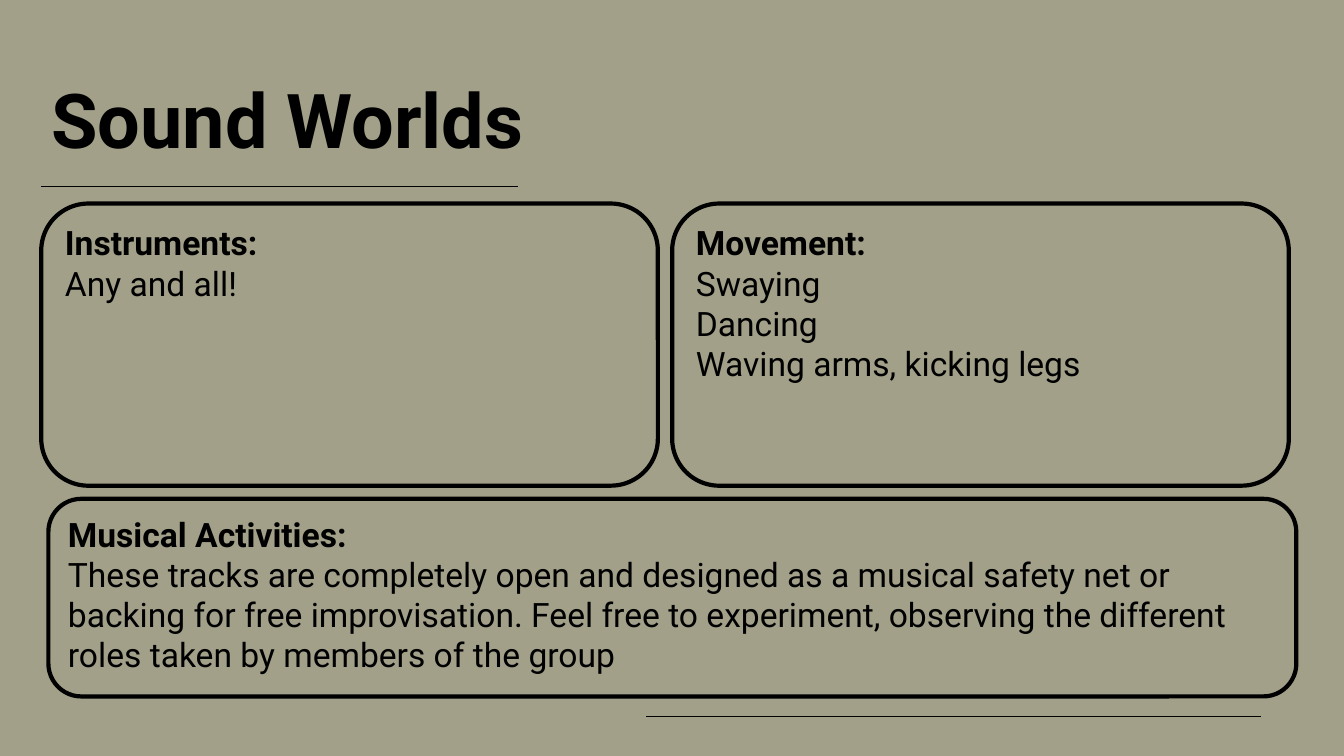
import pptx
import pptx.util
import pptx.dml.color
import pptx.enum.shapes
import pptx.enum.text
import pptx.oxml.ns
from dataclasses import dataclass
from lxml import etree
from pptx.util import Cm, Pt


@dataclass(frozen=True)
class Theme:
    ink = pptx.dml.color.RGBColor(0x00, 0x00, 0x00)
    back = pptx.dml.color.RGBColor(0xA2, 0xA0, 0x89)
    face = "Roboto"
    title = Pt(54)
    body = Pt(24)
    rule = Pt(1)
    frame = Pt(3)


theme = Theme()


def style(para, size, bold):
    """Format every run of a paragraph in the theme's face and ink."""
    for run in para.runs:
        run.font.name = theme.face
        run.font.size = size
        run.font.bold = bold
        run.font.color.rgb = theme.ink


deck = pptx.Presentation()
deck.slide_width, deck.slide_height = Cm(33.87), Cm(19.05)
slide = deck.slides.add_slide(deck.slide_layouts[5])
slide.background.fill.solid()
slide.background.fill.fore_color.rgb = theme.back

# Rules: left, right, height on the slide
for left, right, y in [(16.28, 31.78, 18.06), (1.04, 13.06, 4.7)]:
    rule = slide.shapes.add_connector(
        pptx.enum.shapes.MSO_CONNECTOR.STRAIGHT, Cm(left), Cm(y), Cm(right), Cm(y))
    rule.line.color.rgb = theme.ink
    rule.line.width = theme.rule
    etree.SubElement(rule._element.spPr, pptx.oxml.ns.qn("a:effectLst"))

# Title
title = slide.shapes.title
title.left, title.top, title.width, title.height = Cm(1.04), Cm(1.96), Cm(18.87), Cm(3.2)
frame = title.text_frame
frame.text = "Sound Worlds"
frame.word_wrap = True
frame.vertical_anchor = pptx.enum.text.MSO_ANCHOR.TOP
head = frame.paragraphs[0]
head.alignment = pptx.enum.text.PP_ALIGN.LEFT
head.line_spacing = 0.9
style(head, theme.title, True)

# Panels: left, top, width, height, then a bold heading and its lines
panels = [
    (1.22, 12.57, 31.45, 4.98, [
        "Musical Activities:",
        "These tracks are completely open and designed as a musical safety net or "
        "backing for free improvisation. Feel free to experiment, observing the "
        "different roles taken by members of the group"]),
    (1.04, 5.13, 15.54, 7.11, ["Instruments:", "Any and all!"]),
    (16.94, 5.13, 15.54, 7.11, [
        "Movement:", "Swaying", "Dancing", "Waving arms, kicking legs"]),
]
for left, top, width, height, lines in panels:
    panel = slide.shapes.add_shape(
        pptx.enum.shapes.MSO_SHAPE.ROUNDED_RECTANGLE,
        Cm(left), Cm(top), Cm(width), Cm(height))
    panel.shadow.inherit = False
    panel.fill.background()
    panel.line.color.rgb = theme.ink
    panel.line.width = theme.frame
    frame = panel.text_frame
    frame.word_wrap = True
    frame.vertical_anchor = pptx.enum.text.MSO_ANCHOR.TOP
    frame.text = "\n".join(lines)
    for index, para in enumerate(frame.paragraphs):
        para.alignment = pptx.enum.text.PP_ALIGN.LEFT
        style(para, theme.body, index == 0)

deck.save("out.pptx")
